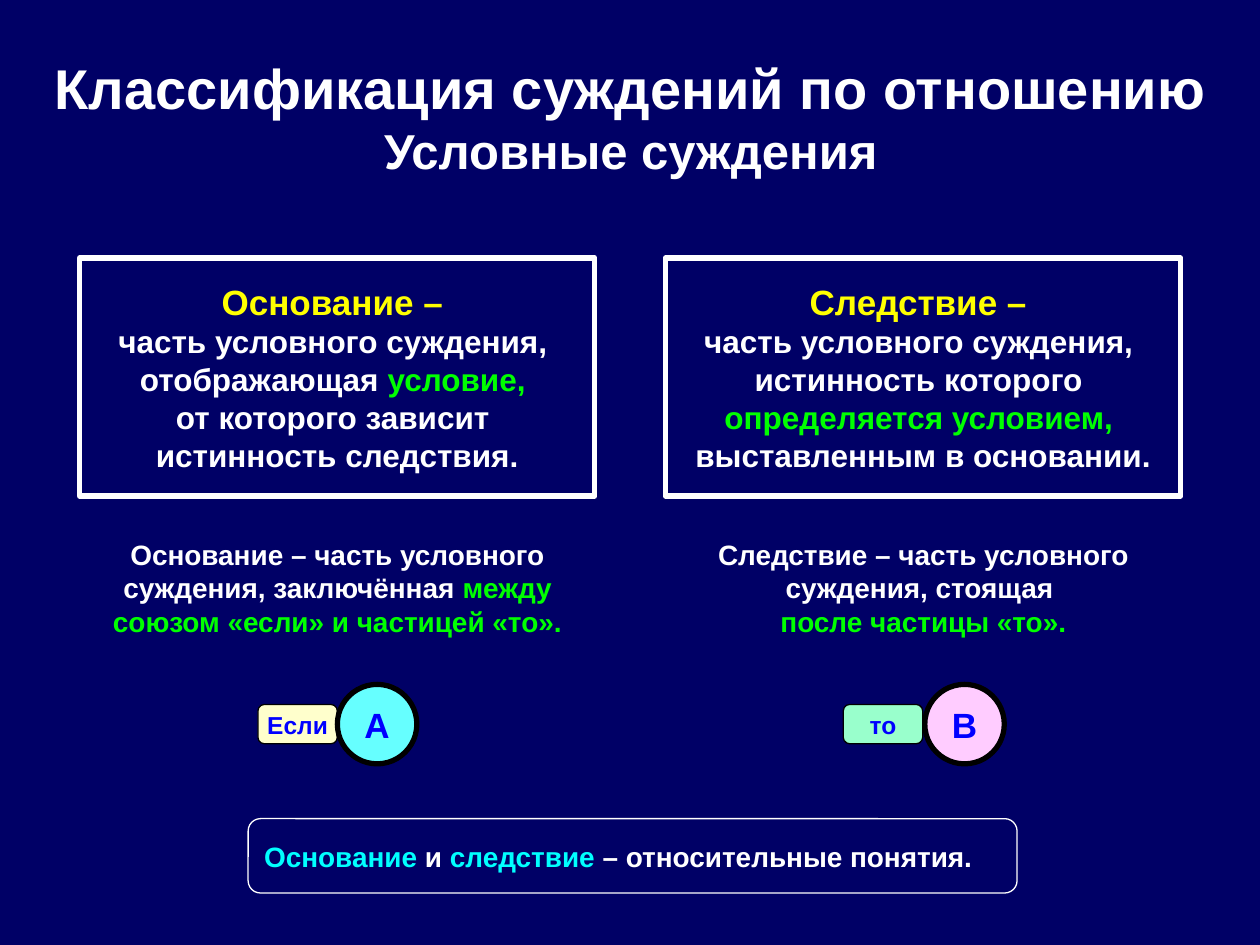
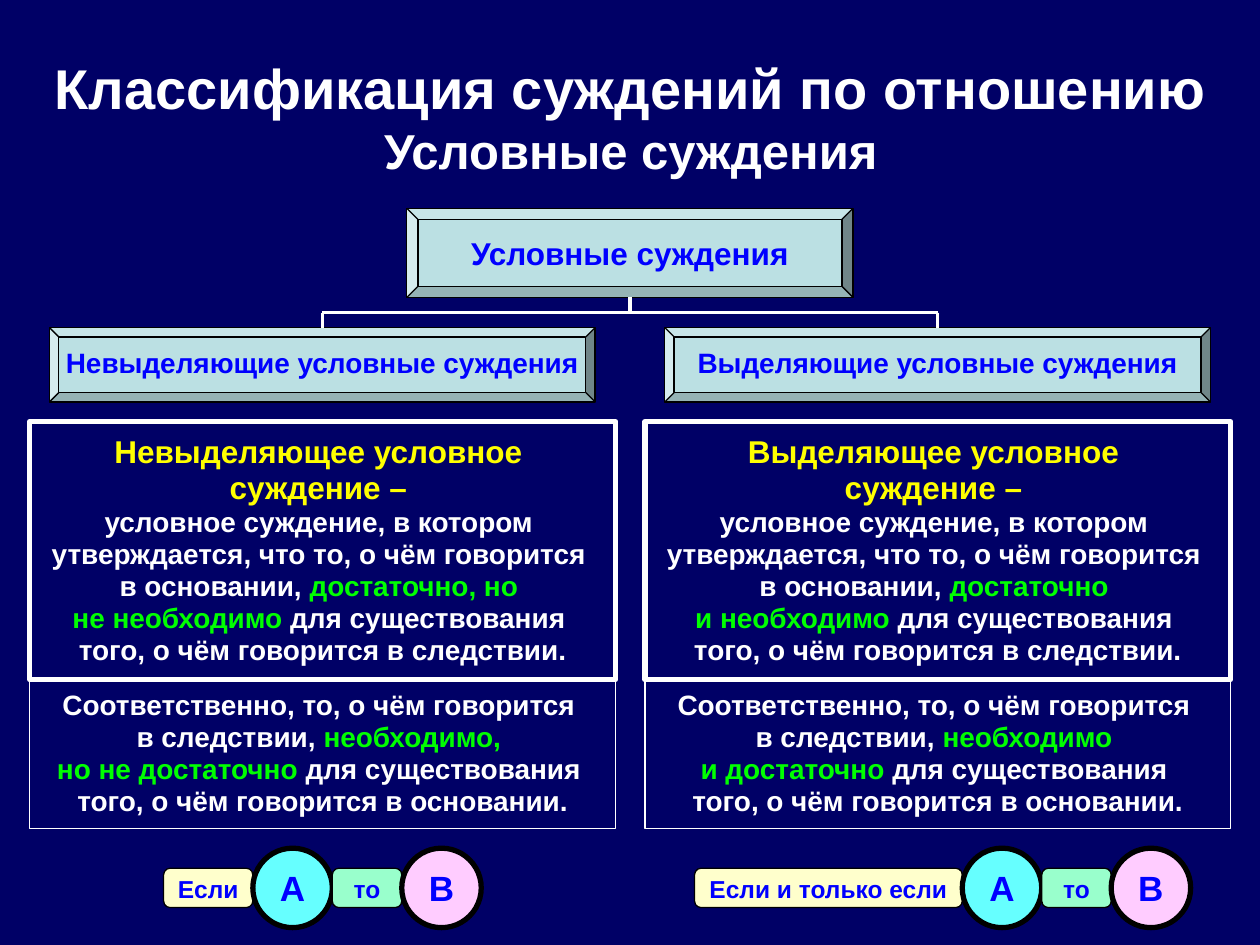
from copy import deepcopy

from lxml import etree
from pptx import Presentation
from pptx.dml.color import RGBColor
from pptx.enum import shapes, text
from pptx.oxml import ns
from pptx.util import Pt

COLORS = {
    "navy": "000066", "white": "FFFFFF", "black": "000000", "blue": "0000FF",
    "yellow": "FFFF00", "green": "00FF00", "cyan": "00FFFF", "ice": "BBE0E3",
    "cream": "FFFFCC", "aqua": "66FFFF", "mint": "99FFCC", "pink": "FFCCFF",
}
RGB = {name: RGBColor.from_string(value) for name, value in COLORS.items()}
KIND = shapes.MSO_SHAPE
CENTER, LEFT = text.PP_ALIGN.CENTER, text.PP_ALIGN.LEFT
CIRCLE = 45.4       # diameter of the A and B circles
CHIP_HEIGHT = 22.5  # height of the conjunction labels


def add_block(slide, kind, box, runs, fill=None, line=None, weight=0.75,
              align=CENTER, spacing=None, wrap=True, top_inset=3.6):
    """Add a shape (or a text box when kind is None) with (text, size, colour) runs."""
    place = [Pt(value) for value in box]
    if kind is None:
        block = slide.shapes.add_textbox(*place)
    else:
        block = slide.shapes.add_shape(kind, *place)
        block.shadow.inherit = False
        if fill:
            block.fill.solid()
            block.fill.fore_color.rgb = RGB[fill]
        else:
            block.fill.background()
        block.line.color.rgb = RGB[line]
        block.line.width = Pt(weight)
    frame = block.text_frame
    frame_format = {"word_wrap": wrap, "margin_top": Pt(top_inset),
                    "vertical_anchor": text.MSO_ANCHOR.MIDDLE}
    for attribute, value in frame_format.items():
        setattr(frame, attribute, value)
    paragraph = frame.paragraphs[0]
    paragraph.alignment = align
    if spacing:
        paragraph.line_spacing = spacing
    for content, size, color in runs:
        for number, part in enumerate(content.split("\n")):
            if number:  # the break takes the format of the run before it
                paragraph.add_line_break()
                paragraph._p[-1].append(deepcopy(run._r.rPr))
            if part:
                run = paragraph.add_run()
                run.text = part
                font_format = {"name": "Arial", "size": Pt(size), "bold": True}
                for attribute, value in font_format.items():
                    setattr(run.font, attribute, value)
                run.font.color.rgb = RGB[color]


def add_formula(slide, left, middle, parts, gap=0):
    """Set labels and circles side by side on one centre line; no width means a circle."""
    for label, fill, width in parts:
        if width:
            add_block(slide, KIND.FLOWCHART_ALTERNATE_PROCESS,
                      (left, middle - CHIP_HEIGHT / 2, width, CHIP_HEIGHT),
                      [(label, 14, "blue")], fill, "black",
                      spacing=0.8, wrap=False, top_inset=7.2)
        else:
            add_block(slide, KIND.OVAL, (left, middle - CIRCLE / 2, CIRCLE, CIRCLE),
                      [(label, 20, "blue")], fill, "black", 3, wrap=False)
        left += (width or CIRCLE) + gap


deck = Presentation()
deck.slide_width, deck.slide_height = Pt(720), Pt(540)

# Shared background and title
slides = []
for _ in range(2):
    slide = deck.slides.add_slide(deck.slide_layouts[6])
    slide.background.fill.solid()
    slide.background.fill.fore_color.rgb = RGB["navy"]
    add_block(slide, None, (7.9, 21.5, 705, 90),
              [("Классификация суждений по отношению\n", 32, "white"),
               ("Условные суждения", 28, "white")])
    slides.append(slide)
parts_slide, types_slide = slides

# Slide 1: definitions of the two parts of a conditional judgement
definitions = [
    [("Основание – \n", 20, "yellow"),
     ("часть условного суждения, \nотображающая ", 18, "white"),
     ("условие, \n", 18, "green"),
     ("от которого зависит \nистинность следствия.", 18, "white")],
    [("Следствие – \n", 20, "yellow"),
     ("часть условного суждения, \nистинность которого \n", 18, "white"),
     ("определяется условием, \n", 18, "green"),
     ("выставленным в основании.", 18, "white")],
]
positions = [
    [("Основание – часть условного суждения, заключённая ", 16, "white"),
     ("между союзом «если» и частицей «то».", 16, "green")],
    [("Следствие – часть условного суждения, стоящая \n", 16, "white"),
     ("после частицы «то».", 16, "green")],
]
for column, (definition, position) in enumerate(zip(definitions, positions)):
    left = 45.4 + column * 334.8
    add_block(parts_slide, KIND.RECTANGLE, (left, 147.4, 294.5, 136.1),
              definition, line="white", weight=3)
    add_block(parts_slide, None, (left + 5.7, 300.4, 283.5, 70.6), position)

# Slide 1: conjunctions and conclusion
add_formula(parts_slide, 147.4, 413.8, [("Если", "cream", CIRCLE), ("A", "aqua", None)])
add_formula(parts_slide, 481.9, 413.8, [("то", "mint", CIRCLE), ("B", "pink", None)], gap=1.2)
add_block(parts_slide, KIND.FLOWCHART_ALTERNATE_PROCESS, (141.8, 467.8, 439.4, 42.5),
          [("Основание", 16, "cyan"), (" и ", 16, "white"), ("следствие", 16, "cyan"),
           (" – относительные понятия.", 16, "white")], line="white", align=LEFT)

# Slide 2: tree of the kinds
add_block(types_slide, KIND.BEVEL, (232.5, 119, 255, 51),
          [("Условные суждения", 18, "blue")], "ice", "black", wrap=False)
kinds = ["Невыделяющие условные суждения", "Выделяющие условные суждения"]
for column, kind in enumerate(kinds):
    add_block(types_slide, KIND.BEVEL, (28.3 + column * 351.6, 187.2, 311.8, 42.5),
              [(kind, 16, "blue")], "ice", "black", spacing=0.9, wrap=False)

# Slide 2: branches
root, bus, root_bottom, kind_top = 360, 178.6, 170, 187.2
branches = [(root, root_bottom, root, bus)]
for kind_middle in (184.2, 535.8):
    branches += [(root, bus, kind_middle, bus), (kind_middle, bus, kind_middle, kind_top)]
for ends in branches:
    branch = types_slide.shapes.add_connector(
        shapes.MSO_CONNECTOR.STRAIGHT, *[Pt(value) for value in ends])
    branch.line.color.rgb = RGB["white"]
    branch.line.width = Pt(2)
    etree.SubElement(branch._element.spPr, ns.qn("a:effectLst"))

# Slide 2: definitions and corollaries, which differ in a few words
wordings = [
    ("Невыделяющее", "достаточно, но \nне необходимо", " ",
     "необходимо, \nно не достаточно "),
    ("Выделяющее", "достаточно \nи необходимо ", "",
     "необходимо \nи достаточно "),
]
for column, (name, ground, space, consequence) in enumerate(wordings):
    left = 17 + column * 351.5
    add_block(types_slide, KIND.RECTANGLE, (left, 241, 334.8, 147.4),
              [(f"{name} условное \nсуждение – \n", 18, "yellow"),
               ("условное суждение, в котором \nутверждается, что то, о чём говорится \n"
                "в основании, ", 16, "white"),
               (ground, 16, "green"),
               (f"{space}для существования \nтого, о чём говорится в следствии.", 16, "white")],
              line="white", weight=3, spacing=0.95)
    add_block(types_slide, KIND.RECTANGLE, (left, 388.4, 334.8, 85),
              [("Соответственно, то, о чём говорится \nв следствии, ", 16, "white"),
               (consequence, 16, "green"),
               ("для существования \nтого, о чём говорится в основании.", 16, "white")],
              line="white", spacing=0.95)

# Slide 2: formulas
for left, condition, width in [(93.5, "Если", 51), (396.9, "Если и только если", 153)]:
    add_formula(types_slide, left, 507.4,
                [(condition, "cream", width), ("A", "aqua", None),
                 ("то", "mint", 39.7), ("B", "pink", None)])

deck.save("out.pptx")
